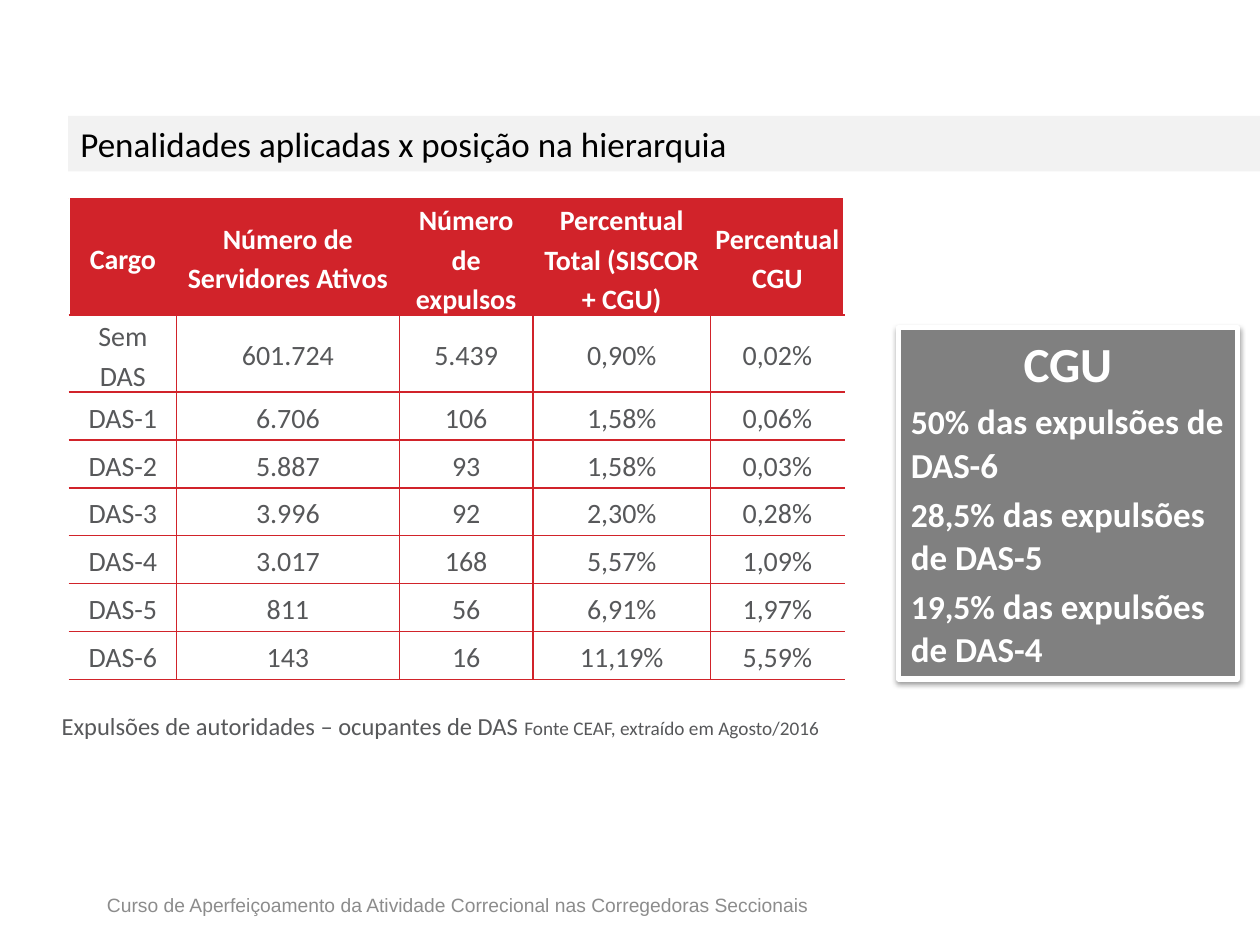
import pptx
import pptx.util
import pptx.dml.color
import pptx.enum.shapes
import pptx.enum.text
import pptx.oxml
import pptx.oxml.ns

Inches, Pt = pptx.util.Inches, pptx.util.Pt
RGBColor = pptx.dml.color.RGBColor
ALIGN, ANCHOR = pptx.enum.text.PP_ALIGN, pptx.enum.text.MSO_ANCHOR
AUTO_SIZE = pptx.enum.text.MSO_AUTO_SIZE

RED = RGBColor(0xD1, 0x23, 0x2A)
TEXT_GREY = RGBColor(0x57, 0x58, 0x5A)
FOOTER_GREY = RGBColor(0x8C, 0x8C, 0x8C)
BAND_GREY = RGBColor(0xF2, 0xF2, 0xF2)
BOX_GREY = RGBColor(0x80, 0x80, 0x80)
WHITE = RGBColor(0xFF, 0xFF, 0xFF)
BLACK = RGBColor(0, 0, 0)

TITLE = "Penalidades aplicadas x posição na hierarquia"
FOOTER = "Curso de Aperfeiçoamento da Atividade Correcional nas Corregedoras Seccionais"
CAPTION = "Expulsões de autoridades – ocupantes de DAS "
SOURCE = "Fonte CEAF, extraído em Agosto/2016"
AGENCY = "CGU"
EXPULSION_SHARES = [
    ("50%", " das expulsões de DAS-6"),
    ("28,5%", " das expulsões de DAS-5"),
    ("19,5%", " das expulsões de DAS-4"),
]
HEADERS = ["Cargo", "Número de Servidores Ativos", "Número de expulsos",
           "Percentual Total (SISCOR + CGU)", "Percentual CGU"]
POSITIONS = [
    ("Sem DAS", "601.724", "5.439", "0,90%", "0,02%"),
    ("DAS-1", "6.706", "106", "1,58%", "0,06%"),
    ("DAS-2", "5.887", "93", "1,58%", "0,03%"),
    ("DAS-3", "3.996", "92", "2,30%", "0,28%"),
    ("DAS-4", "3.017", "168", "5,57%", "1,09%"),
    ("DAS-5", "811", "56", "6,91%", "1,97%"),
    ("DAS-6", "143", "16", "11,19%", "5,59%"),
]
COLUMN_WIDTHS = [0.85, 1.77, 1.06, 1.41, 1.06]
HEADER_HEIGHT, ROW_HEIGHT = 0.67, 0.38
NS = pptx.oxml.ns.nsdecls("a")


def add_text(paragraph, text, size, color, font="Calibri", bold=False, small_caps=False,
             align=ALIGN.LEFT, line_spacing=None, space_after=None):
    """Append a run to the paragraph and format both."""
    paragraph.alignment = align
    if line_spacing:
        paragraph.line_spacing = line_spacing
    if space_after is not None:
        paragraph.space_after = Pt(space_after)
    run = paragraph.add_run()
    run.text = text
    run.font.name, run.font.size, run.font.bold = font, Pt(size), bold
    run.font.color.rgb = color
    if small_caps:
        run._r.get_or_add_rPr().set("cap", "small")


def add_box(slide, left, top, width, height, fill=None, anchor=ANCHOR.TOP, grow=False):
    """Add a filled rectangle, or a text box when there is no fill."""
    place = [Inches(n) for n in (left, top, width, height)]
    if fill is None:
        box = slide.shapes.add_textbox(*place)
    else:
        box = slide.shapes.add_shape(pptx.enum.shapes.MSO_SHAPE.RECTANGLE, *place)
        box.shadow.inherit = False
        box.fill.solid()
        box.fill.fore_color.rgb = fill
        box.line.fill.background()
    frame = box.text_frame
    frame.word_wrap = True
    frame.vertical_anchor = anchor
    frame.auto_size = AUTO_SIZE.SHAPE_TO_FIT_TEXT if grow else AUTO_SIZE.NONE
    return box


def add_shadow(shape):
    effects = shape._element.spPr.find(pptx.oxml.ns.qn("a:effectLst"))
    effects.append(pptx.oxml.parse_xml(
        f'<a:outerShdw {NS} blurRad="{Pt(3.1)}" dist="{Pt(1.6)}" dir="5400000" rotWithShape="0">'
        '<a:srgbClr val="000000"><a:alpha val="38000"/></a:srgbClr></a:outerShdw>'))


def set_borders(cell, sides):
    properties = cell._tc.get_or_add_tcPr()
    for index, side in enumerate(sides):
        properties.insert(index, pptx.oxml.parse_xml(
            f'<a:ln{side} {NS} w="{Pt(1)}"><a:solidFill><a:srgbClr val="{RED}"/>'
            f'</a:solidFill></a:ln{side}>'))


def add_penalty_table(slide):
    rows = [HEADERS] + POSITIONS
    heights = [HEADER_HEIGHT] + [ROW_HEIGHT] * len(POSITIONS)
    table = slide.shapes.add_table(
        len(rows), len(HEADERS), Inches(0.55), Inches(1.58),
        Inches(sum(COLUMN_WIDTHS)), Inches(sum(heights))).table
    table.first_row = table.horz_banding = False
    for column, width in zip(table.columns, COLUMN_WIDTHS):
        column.width = Inches(width)
    last = len(HEADERS) - 1
    for r, values in enumerate(rows):
        table.rows[r].height = Inches(heights[r])
        header = r == 0
        for c, value in enumerate(values):
            cell = table.cell(r, c)
            cell.vertical_anchor = ANCHOR.MIDDLE
            cell.margin_top = cell.margin_bottom = 0
            cell.margin_left = cell.margin_right = Inches(0 if c == last else 0.05)
            if header:
                cell.fill.solid()
                cell.fill.fore_color.rgb = RED
            else:
                cell.fill.background()
            set_borders(cell, ("" if c == 0 else "L") + ("" if c == last else "R") + "TB")
            add_text(cell.text_frame.paragraphs[0], value, 16,
                     WHITE if header else TEXT_GREY, bold=header, align=ALIGN.CENTER,
                     line_spacing=1.15, space_after=0 if header else 10)


def add_agency_box(slide):
    box = add_box(slide, 7.13, 2.6, 2.69, 2.79, fill=BOX_GREY, grow=True)
    box.line.color.rgb = WHITE
    box.line.width = Pt(3)
    add_shadow(box)
    frame = box.text_frame
    add_text(frame.paragraphs[0], AGENCY, 28, WHITE, bold=True, align=ALIGN.CENTER)
    for share, rest in EXPULSION_SHARES:
        line = frame.add_paragraph()
        add_text(line, share, 24, WHITE, bold=True, small_caps=True)
        add_text(line, rest, 20, WHITE, bold=True)


def main():
    deck = pptx.Presentation()
    deck.slide_width, deck.slide_height = Inches(10), Inches(7.5)
    slide = deck.slides.add_slide(deck.slide_layouts[6])

    footer = add_box(slide, 0.75, 6.94, 8.62, 0.48, anchor=ANCHOR.MIDDLE)
    add_text(footer.text_frame.paragraphs[0], FOOTER, 11, FOOTER_GREY, font="Arial")

    title = add_box(slide, 0.54, 0.92, 9.46, 0.44, fill=BAND_GREY, grow=True)
    add_text(title.text_frame.paragraphs[0], TITLE, 20, BLACK)
    add_penalty_table(slide)

    caption = add_box(slide, 0.39, 5.56, 6.58, 0.5, fill=WHITE)
    caption_line = caption.text_frame.paragraphs[0]
    add_text(caption_line, CAPTION, 14, TEXT_GREY, line_spacing=1.15)
    add_text(caption_line, SOURCE, 11, TEXT_GREY, line_spacing=1.15)
    add_agency_box(slide)

    deck.save("out.pptx")


if __name__ == "__main__":
    main()
